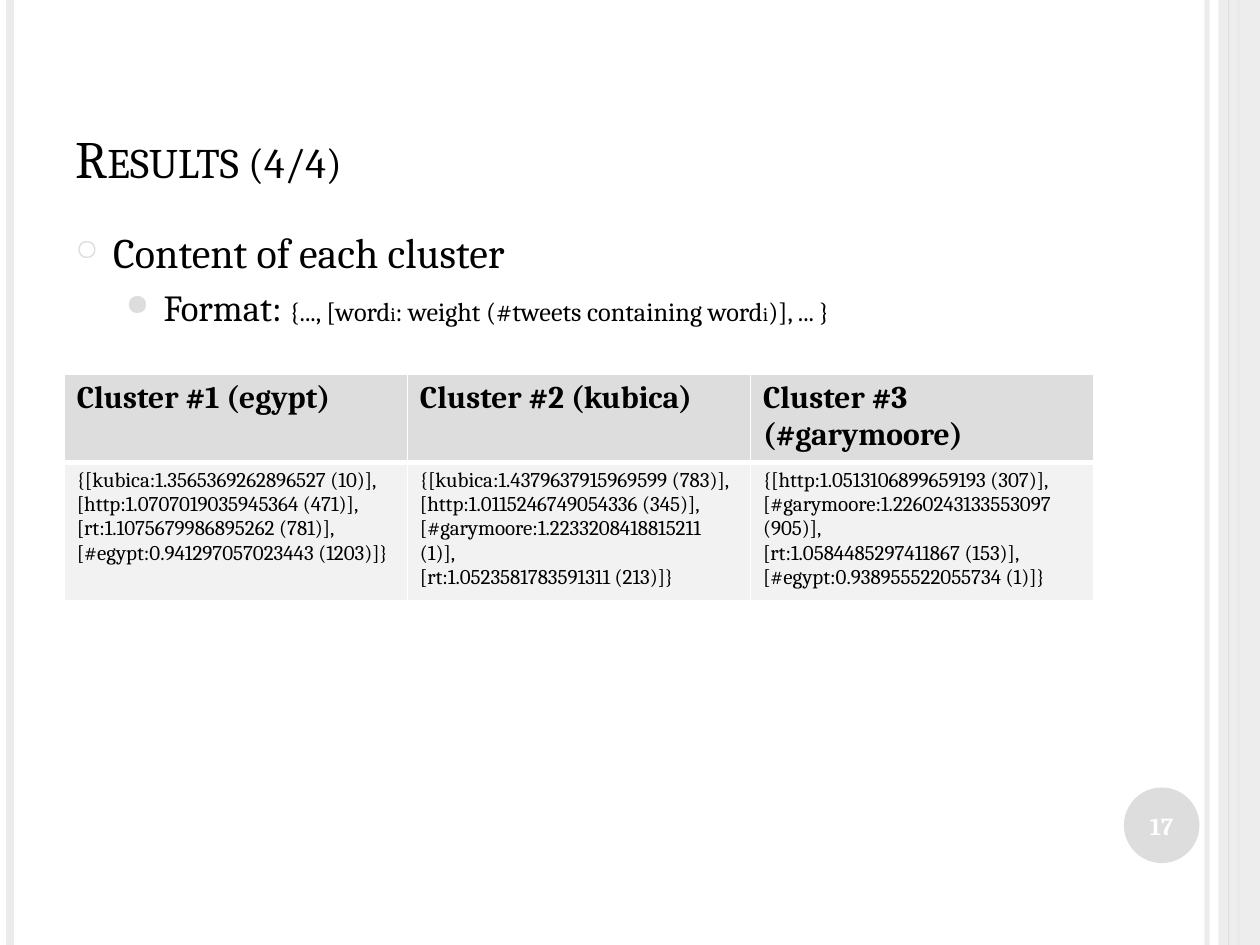
from typing import NamedTuple

from lxml import etree
from pptx import Presentation
from pptx.dml.color import RGBColor
from pptx.enum.shapes import MSO_CONNECTOR, MSO_SHAPE
from pptx.enum.text import MSO_ANCHOR, PP_ALIGN
from pptx.oxml.ns import qn
from pptx.util import Inches, Pt

STRAIGHT = MSO_CONNECTOR.STRAIGHT
RECTANGLE, OVAL = MSO_SHAPE.RECTANGLE, MSO_SHAPE.OVAL
BOTTOM, MIDDLE, TOP = MSO_ANCHOR.BOTTOM, MSO_ANCHOR.MIDDLE, MSO_ANCHOR.TOP
CENTER = PP_ALIGN.CENTER

FONT = "Cambria"
BLACK, WHITE = "000000", "FFFFFF"
GREY, LIGHT_GREY, PALE_GREY = "DDDDDD", "EBEBEB", "F2F2F2"
SLIDE_HEIGHT = 7.5


class Rule(NamedTuple):
    x: float
    color: str
    width: float
    opacity: int = 100


class Bullet(NamedTuple):
    char: str
    size: int
    indent: float
    space_before: float
    level: int
    runs: list[tuple[str, int]]


class Cluster(NamedTuple):
    heading: str
    words: list[str]


BACK_RULES = [
    Rule(9.58, LIGHT_GREY, 3, 93),
    Rule(0.08, LIGHT_GREY, 4.5),
    Rule(9.83, GREY, 1.5),
]
FRONT_RULE = Rule(9.75, GREY, 0.75)

BULLETS = [
    Bullet("○", 70, 0.3, 6, 0, [("Content of each cluster", 24)]),
    Bullet("●", 80, 0.7, 4.2, 1, [
        ("Format: ", 21),
        ("{..., [word", 15), ("i", 11),
        (": weight (#tweets containing word", 15), ("i", 11),
        (")], ... }", 15),
    ]),
]

CLUSTERS = [
    Cluster("Cluster #1 (egypt)", [
        "{[kubica:1.3565369262896527 (10)],",
        "[http:1.0707019035945364 (471)],",
        "[rt:1.1075679986895262 (781)],",
        "[#egypt:0.941297057023443 (1203)]}",
    ]),
    Cluster("Cluster #2 (kubica)", [
        "{[kubica:1.4379637915969599 (783)],",
        "[http:1.0115246749054336 (345)],",
        "[#garymoore:1.2233208418815211 (1)],",
        "[rt:1.0523581783591311 (213)]}",
    ]),
    Cluster("Cluster #3 (#garymoore)", [
        "{[http:1.0513106899659193 (307)],",
        "[#garymoore:1.2260243133553097 (905)],",
        "[rt:1.0584485297411867 (153)],",
        "[#egypt:0.938955522055734 (1)]}",
    ]),
]


def rgb(color: str) -> RGBColor:
    return RGBColor.from_string(color)


def set_opacity(properties, percent: int) -> None:
    """Make the first solid colour under the given XML element translucent."""
    color = next(properties.iter(qn("a:srgbClr")))
    etree.SubElement(color, qn("a:alpha"), val=str(percent * 1000))


def add_rule(slide, rule: Rule) -> None:
    x = Inches(rule.x)
    line = slide.shapes.add_connector(STRAIGHT, x, 0, x, Inches(SLIDE_HEIGHT))
    line.line.color.rgb = rgb(rule.color)
    line.line.width = Pt(rule.width)
    properties = line._element.spPr
    if rule.opacity < 100:
        set_opacity(properties, rule.opacity)
    etree.SubElement(properties, qn("a:effectLst"))


def add_solid(slide, kind, left: float, top: float, width: float, height: float, color: str):
    solid = slide.shapes.add_shape(
        kind, Inches(left), Inches(top), Inches(width), Inches(height))
    solid.shadow.inherit = False
    solid.fill.solid()
    solid.fill.fore_color.rgb = rgb(color)
    solid.line.fill.background()
    return solid


def add_text_frame(slide, top: float, height: float, anchor):
    frame = slide.shapes.add_textbox(
        Inches(0.5), Inches(top), Inches(8.17), Inches(height)).text_frame
    frame.word_wrap = True
    frame.vertical_anchor = anchor
    return frame


def add_run(paragraph, text: str, size: float, color: str = BLACK, bold: bool = False):
    run = paragraph.add_run()
    run.text = text
    run.font.name = FONT
    run.font.size = Pt(size)
    run.font.bold = bold
    run.font.color.rgb = rgb(color)
    return run


def write_lines(frame, lines: list, write) -> None:
    """Give each line its own paragraph, filled by write(paragraph, line)."""
    for index, line in enumerate(lines):
        write(frame.add_paragraph() if index else frame.paragraphs[0], line)


def write_bullet(paragraph, bullet: Bullet) -> None:
    paragraph.level = bullet.level
    paragraph.space_before = Pt(bullet.space_before)
    properties = paragraph._p.get_or_add_pPr()
    properties.set("marL", str(Inches(bullet.indent)))
    properties.set("indent", str(Inches(-0.3)))
    color = etree.SubElement(properties, qn("a:buClr"))
    etree.SubElement(color, qn("a:srgbClr"), val=GREY)
    etree.SubElement(properties, qn("a:buSzPct"), val=str(bullet.size * 1000))
    etree.SubElement(properties, qn("a:buChar"), char=bullet.char)
    for text, size in bullet.runs:
        add_run(paragraph, text, size)


def fill_cell(cell, lines: list[str], size: float, bold: bool, color: str,
              bottom_width: float) -> None:
    write_lines(cell.text_frame, lines,
                lambda paragraph, text: add_run(paragraph, text, size, bold=bold))
    properties = cell._tc.get_or_add_tcPr()
    for side, width in (("L", 1), ("R", 1), ("T", 1), ("B", bottom_width)):
        border = etree.SubElement(properties, qn(f"a:ln{side}"), w=str(Pt(width)))
        fill = etree.SubElement(border, qn("a:solidFill"))
        etree.SubElement(fill, qn("a:srgbClr"), val=WHITE)
    cell.fill.solid()
    cell.fill.fore_color.rgb = rgb(color)


def add_cluster_table(slide) -> None:
    table = slide.shapes.add_table(
        2, len(CLUSTERS), Inches(0.51), Inches(2.97), Inches(8.17), Inches(0.82)).table
    table.horz_banding = False
    for column, cluster in enumerate(CLUSTERS):
        fill_cell(table.cell(0, column), [cluster.heading], 18, True, GREY, 3)
        fill_cell(table.cell(1, column), cluster.words, 12, False, PALE_GREY, 1)


def main() -> None:
    deck = Presentation()
    deck.slide_width, deck.slide_height = Inches(10), Inches(SLIDE_HEIGHT)
    slide = deck.slides.add_slide(deck.slide_layouts[6])

    for rule in BACK_RULES:
        add_rule(slide, rule)
    side_band = add_solid(slide, RECTANGLE, 9.67, 0, 0.33, SLIDE_HEIGHT, LIGHT_GREY)
    set_opacity(side_band._element.spPr, 87)
    add_rule(slide, FRONT_RULE)

    page_badge = add_solid(slide, OVAL, 8.92, 6.25, 0.6, 0.6, GREY).text_frame
    page_badge.margin_left = page_badge.margin_right = 0
    page_badge.vertical_anchor = MIDDLE
    page_badge.paragraphs[0].alignment = CENTER
    add_run(page_badge.paragraphs[0], "17", 14, WHITE, bold=True)

    title = add_text_frame(slide, 0.3, 1.25, BOTTOM)
    title_run = add_run(title.paragraphs[0], "Results (4/4)", 30)
    title_run.font._element.set("cap", "small")

    write_lines(add_text_frame(slide, 1.75, 5.33, TOP), BULLETS, write_bullet)
    add_cluster_table(slide)
    deck.save("out.pptx")


if __name__ == "__main__":
    main()
